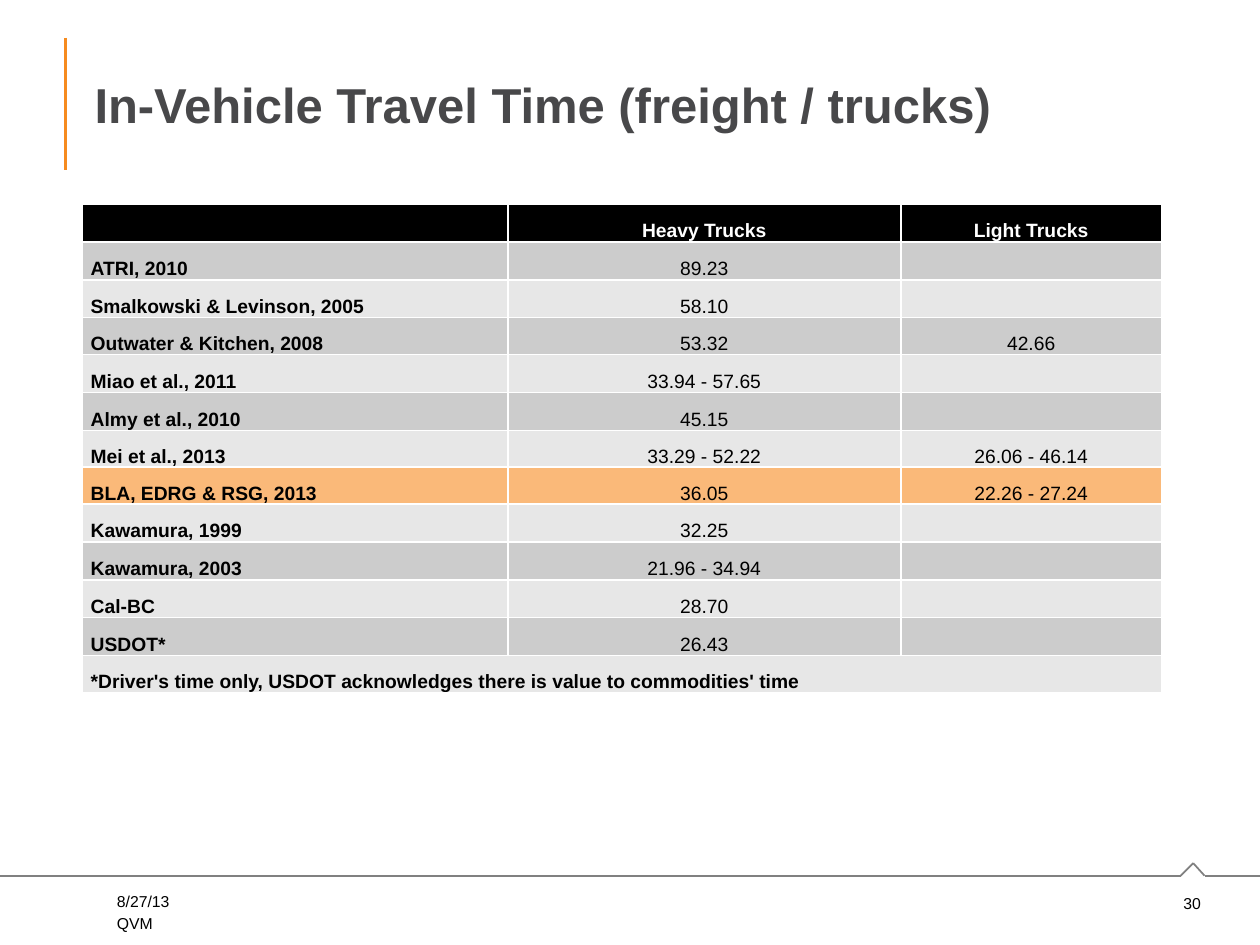
import itertools

import pptx
import pptx.dml.color
import pptx.enum.shapes
import pptx.enum.text
import pptx.oxml.ns
import pptx.util
from lxml import etree

RGBColor = pptx.dml.color.RGBColor
Align = pptx.enum.text.PP_ALIGN
Anchor = pptx.enum.text.MSO_ANCHOR

BLACK = RGBColor(0x00, 0x00, 0x00)
WHITE = RGBColor(0xFF, 0xFF, 0xFF)
CHARCOAL = RGBColor(0x48, 0x48, 0x4A)
RULE_GRAY = RGBColor(0x80, 0x80, 0x80)
ORANGE = RGBColor(0xF6, 0x8B, 0x1F)
HIGHLIGHT = RGBColor(0xFA, 0xB9, 0x79)
DARK_BAND = RGBColor(0xCC, 0xCC, 0xCC)
LIGHT_BAND = RGBColor(0xE7, 0xE7, 0xE7)

HEADER = ("", "Heavy Trucks", "Light Trucks")
STUDIES = (
    ("ATRI, 2010", "89.23", ""),
    ("Smalkowski & Levinson, 2005", "58.10", ""),
    ("Outwater & Kitchen, 2008", "53.32", "42.66"),
    ("Miao et al., 2011", "33.94 - 57.65", ""),
    ("Almy et al., 2010", "45.15", ""),
    ("Mei et al., 2013", "33.29 - 52.22", "26.06 - 46.14"),
    ("BLA, EDRG & RSG, 2013", "36.05", "22.26 - 27.24"),
    ("Kawamura, 1999", "32.25", ""),
    ("Kawamura, 2003", "21.96 - 34.94", ""),
    ("Cal-BC", "28.70", ""),
    ("USDOT*", "26.43", ""),
)
FOOTNOTE = "*Driver's time only, USDOT acknowledges there is value to commodities' time"
HIGHLIGHTED_STUDY = 7


class SlideBuilder:
    GRID_COLUMNS = 100
    GRID_ROWS = 75
    FONT = "Arial"

    def __init__(self, presentation):
        self.presentation = presentation
        self.slide = presentation.slides.add_slide(presentation.slide_layouts[5])

    def across(self, columns):
        return round(self.presentation.slide_width * columns / self.GRID_COLUMNS)

    def down(self, rows):
        return round(self.presentation.slide_height * rows / self.GRID_ROWS)

    def box(self, left, top, width, height):
        return self.across(left), self.down(top), self.across(width), self.down(height)

    def add_text(self, paragraph, text, size, color, bold=False, alignment=Align.LEFT):
        paragraph.alignment = alignment
        run = paragraph.add_run()
        run.text = text
        run.font.name = self.FONT
        run.font.size = pptx.util.Pt(size)
        run.font.bold = bold
        run.font.color.rgb = color

    def title(self, text, *place):
        title = self.slide.shapes.title
        title.left, title.top, title.width, title.height = self.box(*place)
        frame = title.text_frame
        frame.word_wrap = True
        frame.auto_size = pptx.enum.text.MSO_AUTO_SIZE.NONE
        frame.vertical_anchor = Anchor.MIDDLE
        self.add_text(frame.paragraphs[0], text, 28, CHARCOAL, bold=True)

    def label(self, text, *place, alignment=Align.LEFT, anchor=Anchor.TOP, right_inset=1):
        frame = self.slide.shapes.add_textbox(*self.box(*place)).text_frame
        frame.word_wrap = True
        frame.vertical_anchor = anchor
        frame.margin_right = self.across(right_inset)
        self.add_text(frame.paragraphs[0], text, 9, BLACK, alignment=alignment)

    def polyline(self, points, color, width):
        for start, end in itertools.pairwise(points):
            connector = self.slide.shapes.add_connector(
                pptx.enum.shapes.MSO_CONNECTOR.STRAIGHT,
                self.across(start[0]), self.down(start[1]),
                self.across(end[0]), self.down(end[1]),
            )
            connector.line.color.rgb = color
            connector.line.width = pptx.util.Pt(width)
            properties = connector._element.spPr
            etree.SubElement(properties, pptx.oxml.ns.qn("a:effectLst"))

    def cell(self, cell, text, fill, color, bold, alignment):
        cell.fill.solid()
        cell.fill.fore_color.rgb = fill
        cell.vertical_anchor = Anchor.BOTTOM
        cell.margin_left = cell.margin_right = self.across(0.7)
        cell.margin_top = cell.margin_bottom = 0
        if text:
            self.add_text(cell.text_frame.paragraphs[0], text, 11, color, bold, alignment)

    def table(self, rows, column_widths, left, top, height):
        place = self.box(left, top, sum(column_widths), height)
        table = self.slide.shapes.add_table(len(rows), len(column_widths), *place).table
        for column, width in zip(table.columns, column_widths):
            column.width = self.across(width)
        for index, values in enumerate(rows):
            table.rows[index].height = self.down(height / len(rows))
            fill = DARK_BAND if index % 2 else LIGHT_BAND
            if index == 0:
                fill = BLACK
            elif index == HIGHLIGHTED_STUDY:
                fill = HIGHLIGHT
            color = WHITE if index == 0 else BLACK
            for position, text in enumerate(values):
                bold = index == 0 or position == 0
                alignment = Align.CENTER if position else Align.LEFT
                self.cell(table.cell(index, position), text, fill, color, bold, alignment)
        return table


def main():
    presentation = pptx.Presentation()
    presentation.slide_width = pptx.util.Inches(10)
    presentation.slide_height = pptx.util.Inches(7.5)
    builder = SlideBuilder(presentation)

    builder.polyline([(5.2, 3), (5.2, 13.5)], ORANGE, 1.5)
    footer_rule = [(0, 69.5), (93.7, 69.5), (94.7, 68.5), (95.6, 69.5), (100, 69.5)]
    builder.polyline(footer_rule, RULE_GRAY, 1)

    builder.label("30", 92.5, 70.4, 4.2, 2.5,
                  alignment=Align.RIGHT, anchor=Anchor.MIDDLE, right_inset=1.4)
    for text, top in (("8/27/13", 70.3), ("QVM", 72)):
        builder.label(text, 8.3, top, 22.7, 2.5)

    builder.title("In-Vehicle Travel Time (freight / trucks)", 6.5, 3, 88.5, 10.5)
    rows = (HEADER, *STUDIES, (FOOTNOTE, "", ""))
    table = builder.table(rows, (33.8, 31.2, 20.7), 6.5, 16.2, 38.1)
    last = len(rows) - 1
    table.cell(last, 0).merge(table.cell(last, 2))

    presentation.save("out.pptx")


if __name__ == "__main__":
    main()
